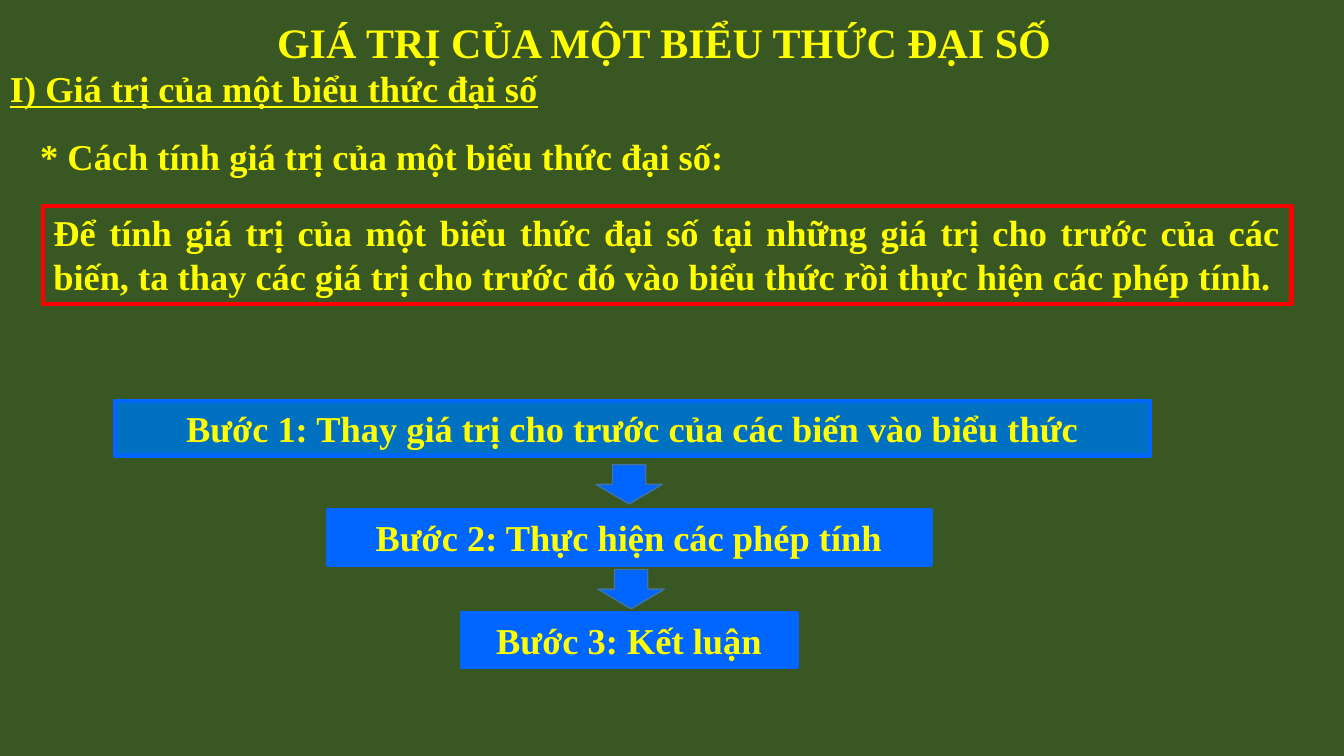
from collections import namedtuple
from dataclasses import dataclass

from pptx import Presentation
from pptx.dml.color import RGBColor as Rgb
from pptx.enum.shapes import MSO_SHAPE as Preset
from pptx.enum.text import MSO_ANCHOR as Anchor, PP_ALIGN as Align
from pptx.util import Inches, Pt

Box = namedtuple("Box", "left top width height")


@dataclass(frozen=True)
class Theme:
    """Colours, font and type sizes of the lesson."""
    board: str = "385723"
    chalk: str = "FFFF00"
    rule_frame: str = "FF0000"
    first_step: str = "0070C0"
    step: str = "0066FF"
    arrow_edge: str = "43739E"
    font: str = "Times New Roman"
    title_size: int = 30
    body_size: int = 26
    frame_width: int = 3
    arrow_width: int = 1


THEME = Theme()
PAGE = Box(0, 0, 13.33, 7.5)
LINE_HEIGHT = 0.54


def inches(box):
    """Convert a box to slide lengths."""
    return [Inches(length) for length in box]


def write(frame, words, size=THEME.body_size, align=Align.LEFT, wrap=True, underline=None):
    """Write one bold paragraph into a text frame."""
    frame.word_wrap = wrap
    frame.vertical_anchor = Anchor.TOP
    paragraph = frame.paragraphs[0]
    paragraph.alignment = align
    run = paragraph.add_run()
    run.text = words
    font = run.font
    font.name, font.size, font.bold = THEME.font, Pt(size), True
    font.underline = underline
    font.color.rgb = Rgb.from_string(THEME.chalk)


def add_heading(slide, box, words, **style):
    """Place a line of text without a frame."""
    heading = slide.shapes.add_textbox(*inches(box))
    write(heading.text_frame, words, wrap=False, **style)


def add_panel(slide, box, preset, fill, edge, edge_width):
    """Place a preset shape, left hollow when it has no fill colour."""
    panel = slide.shapes.add_shape(preset, *inches(box))
    panel.shadow.inherit = False
    if fill:
        panel.fill.solid()
        panel.fill.fore_color.rgb = Rgb.from_string(fill)
    else:
        panel.fill.background()
    panel.line.color.rgb = Rgb.from_string(edge)
    panel.line.width = Pt(edge_width)
    return panel


def add_headings(slide, box):
    """Place the lesson title, the section and its topic."""
    add_heading(slide, Box(box.left + 2.65, box.top + 0.11, 7.95, 0.61),
                "GIÁ TRỊ CỦA MỘT BIỂU THỨC ĐẠI SỐ", size=THEME.title_size)
    add_heading(slide, Box(box.left, box.top + 0.61, 5.49, LINE_HEIGHT),
                "I) Giá trị của một biểu thức đại số", underline=True)
    add_heading(slide, Box(box.left + 0.3, box.top + 1.28, 7.05, LINE_HEIGHT),
                "* Cách tính giá trị của một biểu thức đại số:")


def add_rule(slide, box):
    """Place the framed rule."""
    rule = add_panel(slide, box, Preset.RECTANGLE, None, THEME.rule_frame, THEME.frame_width)
    write(rule.text_frame,
          "Để tính giá trị của một biểu thức đại số tại những giá trị cho trước của các biến, "
          "ta thay các giá trị cho trước đó vào biểu thức rồi thực hiện các phép tính.",
          align=Align.JUSTIFY)


def add_steps(slide, box):
    """Place the narrowing steps and the arrows between them."""
    steps = [
        (0, 0, 10.27, THEME.first_step, "Bước 1: Thay giá trị cho trước của các biến vào biểu thức"),
        (2.11, 1.08, 5.98, THEME.step, "Bước 2: Thực hiện các phép tính"),
        (3.44, 2.1, 3.32, THEME.step, "Bước 3: Kết luận"),
    ]
    for left, top, width, fill, words in steps:
        place = Box(box.left + left, box.top + top, width, LINE_HEIGHT)
        step = add_panel(slide, place, Preset.RECTANGLE, fill, THEME.step, THEME.frame_width)
        write(step.text_frame, words, align=Align.CENTER)
    for left, top in [(4.77, 0.63), (4.79, 1.67)]:
        place = Box(box.left + left, box.top + top, 0.66, 0.39)
        add_panel(slide, place, Preset.DOWN_ARROW, THEME.step, THEME.arrow_edge, THEME.arrow_width)


def main():
    """Build and save the lesson slide."""
    deck = Presentation()
    deck.slide_width, deck.slide_height = Inches(PAGE.width), Inches(PAGE.height)
    slide = deck.slides.add_slide(deck.slide_layouts[6])
    board = slide.background.fill
    board.solid()
    board.fore_color.rgb = Rgb.from_string(THEME.board)
    add_headings(slide, PAGE)
    add_rule(slide, Box(0.43, 2.04, 12.38, 0.98))
    add_steps(slide, Box(1.14, 3.98, 10.27, 2.64))
    deck.save("out.pptx")


if __name__ == "__main__":
    main()
